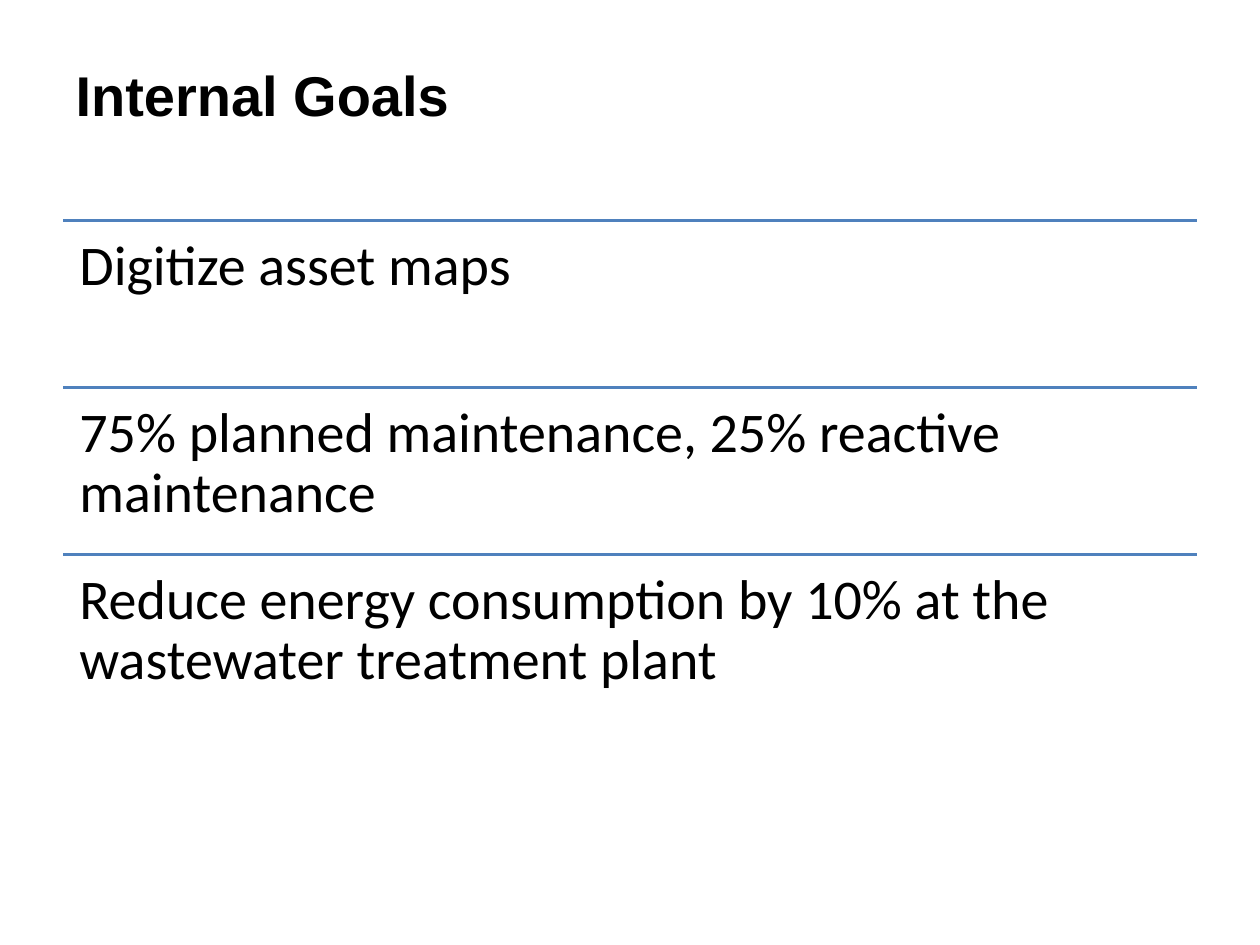
"""Build the Internal Goals slide."""
import pptx
import pptx.util
import pptx.dml.color
import pptx.enum.shapes
import pptx.enum.text
import pptx.oxml
import pptx.oxml.ns

Inches = pptx.util.Inches
Pt = pptx.util.Pt

TITLE = "Internal Goals"
GOALS = [
    "Digitize asset maps",
    "75% planned maintenance, 25% reactive maintenance",
    "Reduce energy consumption by 10% at the wastewater treatment plant",
]
COLORS = {"text": "000000", "rule": "4F81BD"}
LEFT, TOP, WIDTH, STEP = 0.5, 1.75, 9, 1.325
INSET = Inches(0.13)


def color(name):
    return pptx.dml.color.RGBColor.from_string(COLORS[name])


def style(para, face, bold=False):
    para.alignment = pptx.enum.text.PP_ALIGN.LEFT
    para.font.name = face
    para.font.size = Pt(32)
    para.font.bold = bold
    para.font.color.rgb = color("text")


def add_title(slide):
    title = slide.shapes.title
    title.left, title.top = Inches(LEFT), Inches(0.12)
    title.width, title.height = Inches(WIDTH), Inches(1.25)
    frame = title.text_frame
    frame.text = TITLE
    frame.vertical_anchor = pptx.enum.text.MSO_ANCHOR.MIDDLE
    style(frame.paragraphs[0], "Arial", True)


def add_rule(slide, top):
    rule = slide.shapes.add_connector(
        pptx.enum.shapes.MSO_CONNECTOR.STRAIGHT,
        Inches(LEFT), Inches(top), Inches(LEFT + WIDTH), Inches(top))
    rule.line.color.rgb = color("rule")
    rule.line.width = Pt(2)
    props = rule._element.spPr
    props.append(pptx.oxml.parse_xml(
        "<a:effectLst %s/>" % pptx.oxml.ns.nsdecls("a")))


def add_goal(slide, goal, top):
    box = slide.shapes.add_textbox(
        Inches(LEFT), Inches(top), Inches(WIDTH), Inches(STEP))
    frame = box.text_frame
    frame.word_wrap = True
    frame.margin_left = frame.margin_right = INSET
    frame.margin_top = frame.margin_bottom = INSET
    frame.text = goal
    para = frame.paragraphs[0]
    para.line_spacing = 0.9
    style(para, "Calibri")


def main():
    deck = pptx.Presentation()
    deck.slide_width, deck.slide_height = Inches(10), Inches(7.5)
    slide = deck.slides.add_slide(deck.slide_layouts[5])
    add_title(slide)
    for row, goal in enumerate(GOALS):
        top = TOP + row * STEP
        add_rule(slide, top)
        add_goal(slide, goal, top)
    deck.save("out.pptx")


if __name__ == "__main__":
    main()
